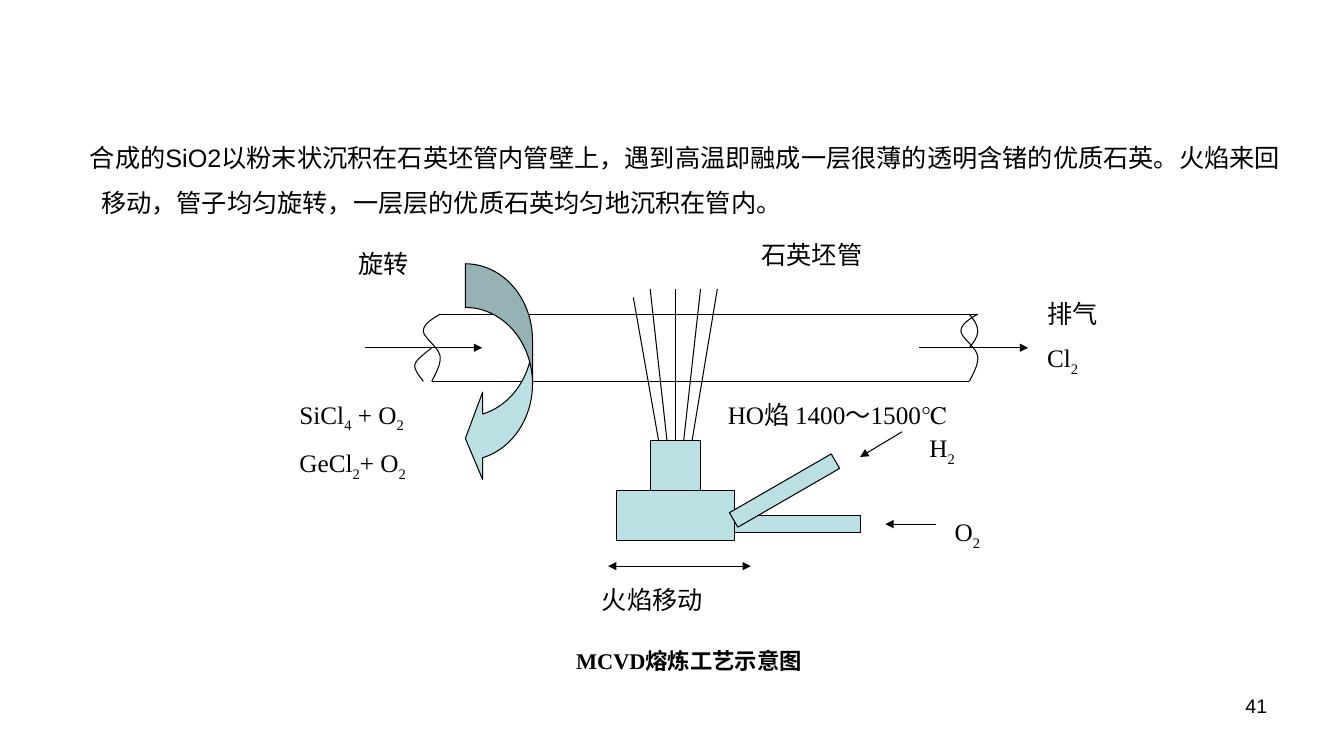
from dataclasses import dataclass

from lxml import etree
from pptx import Presentation, util as u
from pptx.dml.color import RGBColor
from pptx.enum import shapes, text
from pptx.oxml.ns import qn

BLACK, PALE_TEAL = "000000", "BBE0E3"
SERIF, SANS = "Times New Roman", "Arial"
STEP, ORIGIN = 6, 2.4  # the drawing sits on a grid of 6 points
CURVE_STEPS = 10

Point = tuple[float, float]


@dataclass
class Label:
    lines: list[str]  # every second piece between bars is a subscript
    left: float
    top: float
    width: float
    height: float = 30
    size: float = 18
    font: str = SERIF
    bold: bool = False
    inset: Point = (1.5, 0.75)
    align: text.PP_ALIGN = text.PP_ALIGN.LEFT
    spacing: float = 1.0
    margin: float = 0
    indent: float = 0


@dataclass
class Block:
    left: float
    top: float
    width: float
    height: float
    rotation: float = 0
    kind: shapes.MSO_SHAPE = shapes.MSO_SHAPE.RECTANGLE
    adjustments: tuple[float, ...] = ()


@dataclass
class Line:
    start: Point
    end: Point
    arrows: tuple[str, ...] = ()


def grid(step: float) -> float:
    return STEP * step + ORIGIN


def color(value: str) -> RGBColor:
    return RGBColor.from_string(value)


def outline(item) -> None:
    item.line.color.rgb = color(BLACK)
    item.line.width = u.Pt(0.75)


def add_label(page, label: Label) -> None:
    box = page.shapes.add_textbox(*map(u.Pt, (label.left, label.top, label.width, label.height)))
    frame = box.text_frame
    frame.word_wrap = True
    frame.margin_left = frame.margin_right = u.Pt(label.inset[0])
    frame.margin_top = frame.margin_bottom = u.Pt(label.inset[1])
    for number, line in enumerate(label.lines):
        para = frame.add_paragraph() if number else frame.paragraphs[0]
        para.alignment = label.align
        para.line_spacing = label.spacing
        if number:
            para.space_before = u.Pt(10)
        if label.margin:
            properties = para._p.get_or_add_pPr()
            properties.set("marL", str(u.Pt(label.margin)))
            properties.set("indent", str(u.Pt(label.indent)))
        for index, piece in enumerate(line.split("|")):
            if not piece:
                continue
            span = para.add_run()
            span.text = piece
            span.font.name = label.font
            span.font.size = u.Pt(label.size)
            span.font.bold = label.bold
            span.font.color.rgb = color(BLACK)
            if index % 2:
                span._r.get_or_add_rPr().set("baseline", "-25000")


def add_block(page, block: Block):
    places = (grid(block.left), grid(block.top), block.width * STEP, block.height * STEP)
    shape = page.shapes.add_shape(block.kind, *map(u.Pt, places))
    shape.shadow.inherit = False
    shape.rotation = block.rotation
    for index, value in enumerate(block.adjustments):
        shape.adjustments[index] = value
    shape.fill.solid()
    shape.fill.fore_color.rgb = color(PALE_TEAL)
    outline(shape)
    return shape


def add_line(page, line: Line):
    ends = [u.Pt(grid(step)) for step in (*line.start, *line.end)]
    connector = page.shapes.add_connector(shapes.MSO_CONNECTOR.STRAIGHT, *ends)
    outline(connector)
    stroke = connector.line._get_or_add_ln()
    for arrow in line.arrows:
        etree.SubElement(stroke, qn(f"a:{arrow}"), type="triangle")
    etree.SubElement(connector._element.spPr, qn("a:effectLst"))
    return connector


def bezier(points: list[Point]) -> list[Point]:
    """Sample a chain of cubic curves; every third point lies on the chain."""
    samples = []
    for first in range(0, len(points) - 1, 3):
        a, b, c, d = points[first:first + 4]
        for number in range(1, CURVE_STEPS + 1):
            t = number / CURVE_STEPS
            s = 1 - t
            samples.append(tuple(
                s**3 * a[k] + 3 * s * s * t * b[k] + 3 * s * t * t * c[k] + t**3 * d[k]
                for k in (0, 1)))
    return samples


def add_curve(page, points: list[Point], shift: float = 0) -> None:
    start, *rest = [(u.Pt(grid(x + shift)), u.Pt(grid(y)))
                    for x, y in [points[0], *bezier(points)]]
    builder = page.shapes.build_freeform(*start)
    builder.add_line_segments(rest, close=False)
    curve = builder.convert_to_shape()
    curve.shadow.inherit = False
    curve.fill.background()
    outline(curve)


HEAD, TAIL = "headEnd", "tailEnd"

TUBE_END = [(52, 37), (51, 37.6), (50, 38.2), (50, 39), (50, 39.8), (51.8, 40.9),
            (52, 42), (52.1, 43), (51.5, 44), (51, 45)]
INLET_EDGE = [(51, 41), (50.2, 41.7), (49.2, 42.3), (49, 43), (48.8, 43.6), (49.8, 44.7), (50, 45)]
OUTLET_EDGE = [(115, 37), (115.5, 37.6), (116, 38.3), (116, 39),
               (116, 39.7), (115.5, 40.4), (115, 41)]

LINES = [
    Line((52, 37), (116, 37)),  # tube walls
    Line((51, 45), (115, 45)),
    Line((43, 41), (57, 41), (TAIL,)),  # gas in and out
    Line((109, 41), (122, 41), (TAIL,)),
    Line((107, 51), (102, 54), (TAIL,)),  # burner supply
    Line((111, 62), (105, 62), (TAIL,)),
    Line((89, 67), (72, 67), (HEAD, TAIL)),  # burner travel
    Line((79, 52), (77, 34)),  # side flames
    Line((81, 52), (83, 34)),
    Line((82, 52), (85, 34)),
    Line((78, 52), (75, 35)),
]

NOZZLE = Block(77, 52, 6, 6)
BLOCKS = [
    Block(73, 58, 14, 6),  # burner body
    Block(87, 61, 15, 2),  # oxygen pipe
    Block(86, 57, 14, 2, rotation=330),  # hydrogen pipe
    Block(55, 31, 8, 26, kind=shapes.MSO_SHAPE.CURVED_LEFT_ARROW, adjustments=(0.65, 1.3, 0.258)),
]

LABELS = [
    Label(["41"], 688.4, 491.8, 223.9, 37.4, 14, SANS, inset=(7.2, 3.6), align=text.PP_ALIGN.RIGHT),
    Label(["合成的SiO2以粉末状沉积在石英坯管内管壁上，遇到高温即融成一层很薄的透明含锗的优质石英。"
           "火焰来回移动，管子均匀旋转，一层层的优质石英均匀地沉积在管内。"],
          38.2, 87, 895, 70, font=SANS, inset=(7.2, 3.6), spacing=1.5, margin=27, indent=-8.1),
    Label(["H|2"], grid(110), grid(51), 30),
    Label(["O|2"], grid(113), grid(61), 30),
    Label(["火焰移动"], grid(71), grid(69), 108),
    Label(["SiCl|4| + O|2", "GeCl|2|+ O|2"], grid(35), grid(47), 114, 73),
    Label(["排气", "Cl|2"], grid(124), grid(35), 60, 73),
    Label(["石英坯管"], grid(90), grid(28), 108),
    Label(["HO焰 1400～1500℃"], grid(86), grid(47), 222),
    Label(["MCVD熔炼工艺示意图"], grid(67), grid(76), 240, 27, 16, bold=True, inset=(7.2, 3.6)),
    Label(["旋转"], grid(42), grid(29), 54),
]


def main() -> None:
    deck = Presentation()
    deck.slide_width, deck.slide_height = u.Pt(960), u.Pt(540)
    page = deck.slides.add_slide(deck.slide_layouts[6])

    # Tube, flames and arrows
    for line in LINES:
        add_line(page, line)
    for points, shift in ((TUBE_END, 0), (TUBE_END, 64), (INLET_EDGE, 0), (OUTLET_EDGE, 0)):
        add_curve(page, points, shift)

    # Burner and rotation arrow
    nozzle = add_block(page, NOZZLE)
    for block in BLOCKS:
        add_block(page, block)
    add_line(page, Line((80, 52), (80, 34))).begin_connect(nozzle, 0)

    # Wording
    for label in LABELS:
        add_label(page, label)
    deck.save("out.pptx")


if __name__ == "__main__":
    main()
